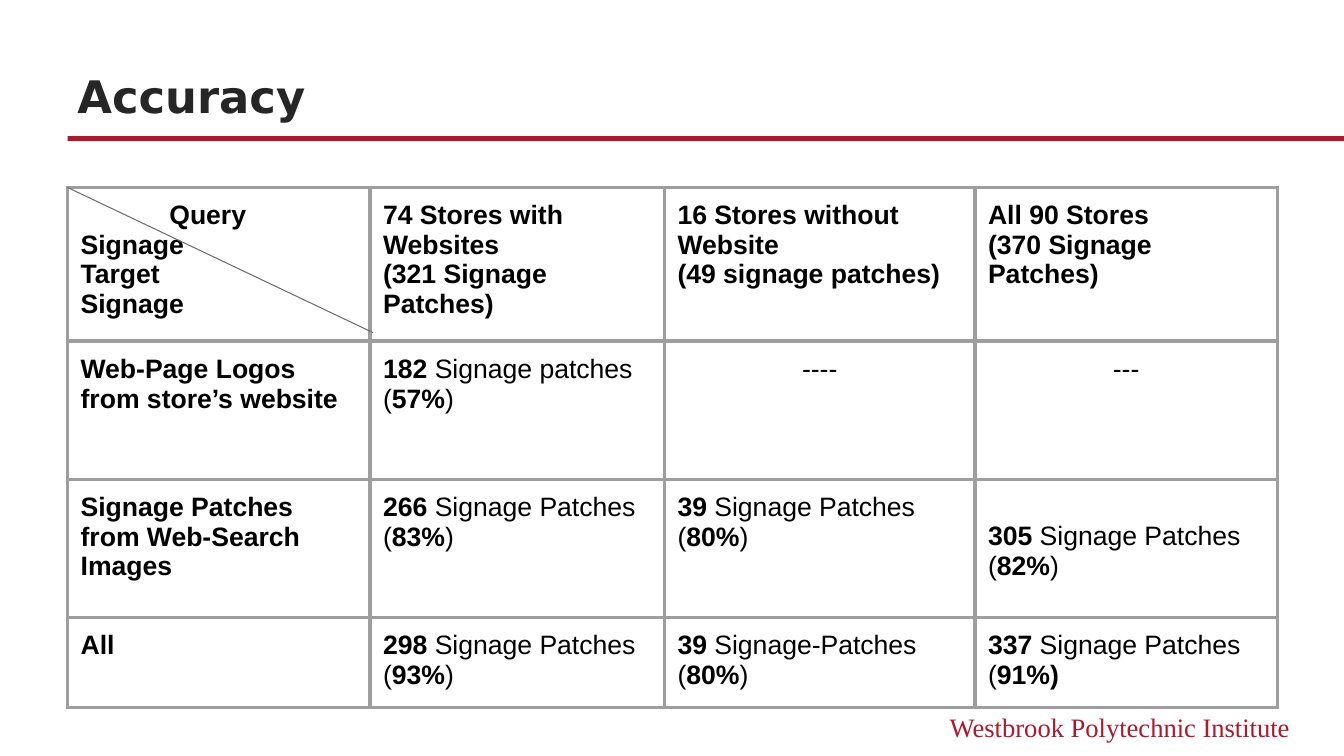
import pptx
import pptx.util
import pptx.dml.color
import pptx.enum.shapes
import pptx.enum.text
import pptx.oxml
import pptx.oxml.ns
import lxml.etree

Inches, Pt = pptx.util.Inches, pptx.util.Pt
ALIGN = pptx.enum.text.PP_ALIGN
ANCHOR = pptx.enum.text.MSO_ANCHOR
COLORS = {"crimson": "AB192D", "title": "262626", "text": "000000",
          "border": "9E9E9E", "diagonal": "6D6D6D"}

LEFT, TABLE_TOP = 0.67, 1.86
COLUMNS = [3, 2.92, 3.08, 3]
ROWS = [1.44, 1.37, 1.37, 0.86]
PADDING = 0.13
LINE_HEIGHT = 0.29

# Each cell is a list of paragraphs; text between asterisks is bold.
CELLS = [
    [["*Query\vSignage*", "*Target*", "*Signage*"],
     ["*74 Stores with Websites*", "*(321 Signage Patches)*"],
     ["*16 Stores without Website*", "*(49 signage patches)*"],
     ["*All 90 Stores*", "*(370 Signage Patches)*"]],
    [["*Web-Page Logos from store’s website*"],
     ["*182* Signage patches", "(*57%*)"],
     ["----"],
     ["---"]],
    [["*Signage Patches from Web-Search Images*"],
     ["*266* Signage Patches", "(*83%*)"],
     ["*39* Signage Patches", "(*80%*)"],
     ["*305* Signage Patches", "(*82%*)"]],
    [["*All*"],
     ["*298* Signage Patches (*93%*)"],
     ["*39* Signage-Patches", "(*80%*)"],
     ["*337* Signage Patches", "(*91%)*"]],
]


def rgb(name):
    """Return the named colour."""
    return pptx.dml.color.RGBColor.from_string(COLORS[name])


def style_run(r, font, size, color, bold=False):
    """Set the font of a run."""
    r.font.name, r.font.size, r.font.bold = font, Pt(size), bold
    r.font.color.rgb = rgb(color)


def add_text(s, text, box, font, size, color, bold=False,
             align=ALIGN.LEFT, anchor=ANCHOR.TOP):
    """Add a one-line text box."""
    tf = s.shapes.add_textbox(*map(Inches, box)).text_frame
    tf.word_wrap = True
    tf.vertical_anchor = anchor
    p = tf.paragraphs[0]
    p.text, p.alignment = text, align
    style_run(p.runs[0], font, size, color, bold)


def add_rule(s, box):
    """Add the solid bar under the title."""
    sp = s.shapes.add_shape(pptx.enum.shapes.MSO_SHAPE.RECTANGLE,
                            *map(Inches, box))
    sp.shadow.inherit = False
    sp.fill.solid()
    sp.fill.fore_color.rgb = rgb("crimson")
    sp.line.fill.background()


def add_line(s, start, end, color, width):
    """Add a straight line without a shadow."""
    sp = s.shapes.add_connector(pptx.enum.shapes.MSO_CONNECTOR.STRAIGHT,
                                *map(Inches, start + end))
    sp.line.color.rgb = rgb(color)
    sp.line.width = Pt(width)
    lxml.etree.SubElement(sp.element.spPr, pptx.oxml.ns.qn("a:effectLst"))


def set_borders(cell, color, width):
    """Draw all four borders of a cell."""
    tcPr = cell._tc.get_or_add_tcPr()
    for side in "LRTB":
        tcPr.append(pptx.oxml.parse_xml(
            f'<a:ln{side} {pptx.oxml.ns.nsdecls("a")} w="{Pt(width)}">'
            f'<a:solidFill><a:srgbClr val="{COLORS[color]}"/></a:solidFill>'
            f'</a:ln{side}>'))


def fill_cell(cell, paragraphs):
    """Write a cell's paragraphs, bold between asterisks."""
    cell.margin_left = cell.margin_right = Inches(PADDING)
    cell.margin_top = cell.margin_bottom = Inches(PADDING)
    set_borders(cell, "border", 3)
    cell.fill.background()
    tf = cell.text_frame
    for i, text in enumerate(paragraphs):
        p = tf.add_paragraph() if i else tf.paragraphs[0]
        if not text.strip("-"):
            p.alignment = ALIGN.CENTER
        for j, part in enumerate(text.split("*")):
            for k, line in enumerate(part.split("\v")):
                if k:
                    p.add_line_break()
                if line:
                    r = p.add_run()
                    r.text = line
                    style_run(r, "Arial", 19, "text", bold=j % 2 == 1)


def add_accuracy_table(s):
    """Add the accuracy table and return it."""
    table = s.shapes.add_table(
        len(ROWS), len(COLUMNS), Inches(LEFT), Inches(TABLE_TOP),
        Inches(sum(COLUMNS)), Inches(sum(ROWS))).table
    table.first_row = table.horz_banding = False
    for column, width in zip(table.columns, COLUMNS):
        column.width = Inches(width)
    for row, height, texts in zip(table.rows, ROWS, CELLS):
        row.height = Inches(height)
        for cell, paragraphs in zip(row.cells, texts):
            fill_cell(cell, paragraphs)
    return table


def main():
    """Build the accuracy slide."""
    prs = pptx.Presentation()
    prs.slide_width, prs.slide_height = Inches(13.33), Inches(7.5)
    s = prs.slides.add_slide(prs.slide_layouts[6])

    add_rule(s, (LEFT, 1.35, 12.67, 0.05))
    add_text(s, "Westbrook Polytechnic Institute", (8, 7, 4.89, 0.4),
             "Times New Roman", 19, "crimson", align=ALIGN.RIGHT)
    add_text(s, "Accuracy", (LEFT, 0.38, 12, 0.88), "DejaVu Sans", 32,
             "title", bold=True, anchor=ANCHOR.BOTTOM)

    table = add_accuracy_table(s)
    query = table.cell(0, 0).text_frame.paragraphs[0]
    query._p.get_or_add_pPr().set("indent", str(Inches(0.88)))
    table.cell(2, 3).margin_top = Inches(PADDING + LINE_HEIGHT)
    add_line(s, (LEFT, TABLE_TOP), (3.7, 3.3), "diagonal", 0.75)

    prs.save("out.pptx")


main()
